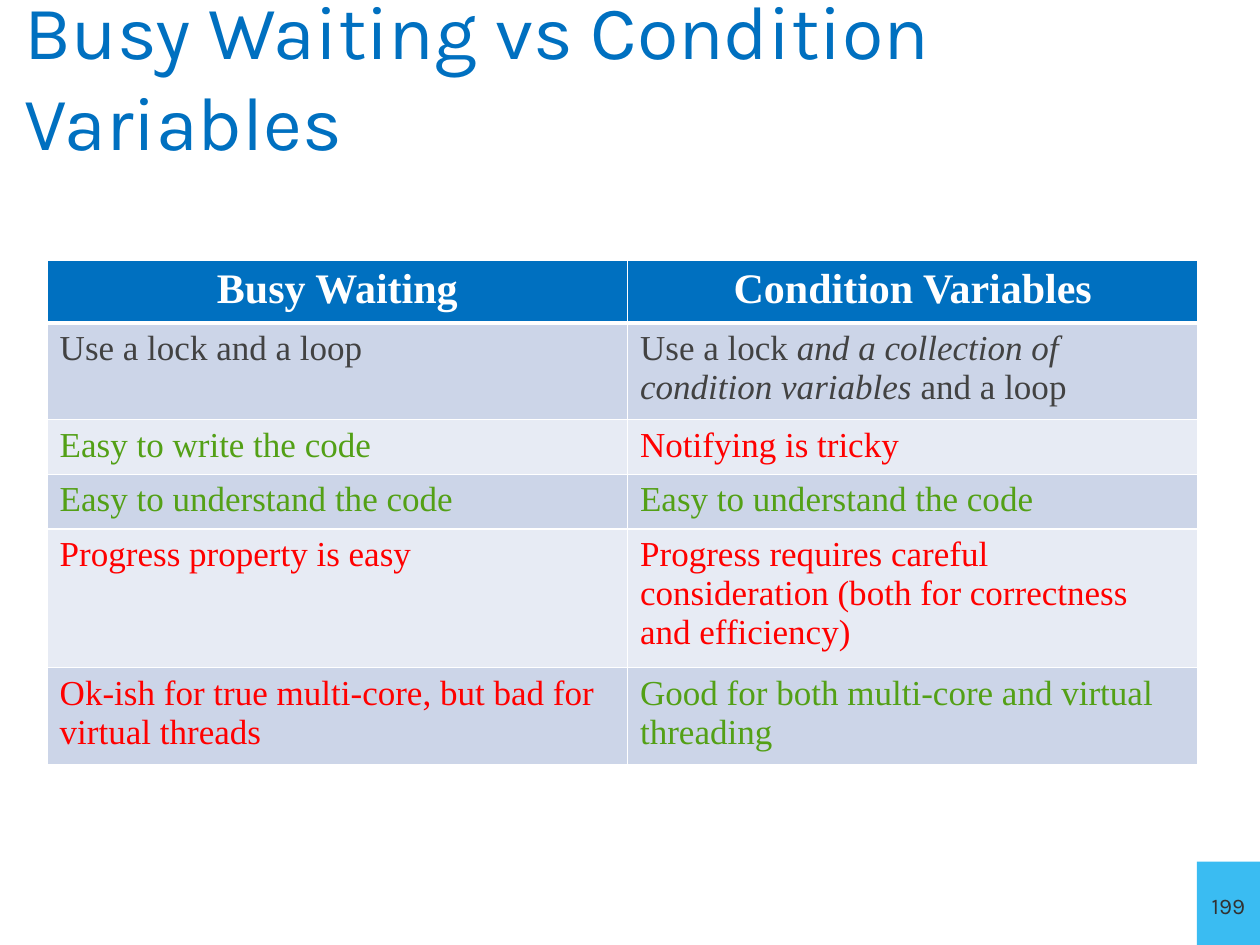
from lxml.etree import SubElement
from pptx import Presentation
from pptx.dml.color import RGBColor
from pptx.enum.shapes import MSO_SHAPE
from pptx.enum.text import MSO_ANCHOR, PP_ALIGN
from pptx.oxml.ns import qn
from pptx.util import Cm, Pt

BLUE = RGBColor(0x00, 0x70, 0xC0)
SKY = RGBColor(0x3A, 0xBC, 0xF2)
WHITE = RGBColor(0xFF, 0xFF, 0xFF)
INK = RGBColor(0x32, 0x32, 0x32)
GRAY = RGBColor(0x42, 0x42, 0x42)
GREEN = RGBColor(0x53, 0xA0, 0x16)
RED = RGBColor(0xFF, 0x00, 0x00)
BANDS = [RGBColor(0xCC, 0xD5, 0xE8), RGBColor(0xE7, 0xEB, 0xF4)]

TITLE = "Busy Waiting vs Condition Variables"
PAGE_NUMBER = "199"
HEADERS = ["Busy Waiting", "Condition Variables"]
ROWS = [
    [(GRAY, ["Use a lock and a loop"]),
     (GRAY, ["Use a lock ", "and a collection of condition variables ", "and a loop"])],
    [(GREEN, ["Easy to write the code"]), (RED, ["Notifying is tricky"])],
    [(GREEN, ["Easy to understand the code"]), (GREEN, ["Easy to understand the code"])],
    [(RED, ["Progress property is easy"]),
     (RED, ["Progress requires careful consideration (both for correctness and efficiency)"])],
    [(RED, ["Ok-ish for true multi-core, but bad for virtual threads"]),
     (GREEN, ["Good for both multi-core and virtual threading"])],
]
COLUMN_WIDTHS = [Cm(11.7), Cm(11.5)]
ROW_HEIGHT = Cm(1.03)


def style(paragraph, name, size, color, bold=False):
    font = paragraph.font
    font.name, font.size, font.bold = name, Pt(size), bold
    font.color.rgb = color


def set_borders(cell, bottom_width):
    properties = cell._tc.get_or_add_tcPr()
    widths = {"a:lnL": 1, "a:lnR": 1, "a:lnT": 1, "a:lnB": bottom_width}
    for position, (tag, width) in enumerate(widths.items()):
        line = SubElement(properties, qn(tag), w=str(Pt(width)))
        fill = SubElement(line, qn("a:solidFill"))
        SubElement(fill, qn("a:srgbClr"), val=str(WHITE))
        properties.insert(position, line)


def fill_cell(cell, texts, size, color, background, header=False):
    cell.fill.solid()
    cell.fill.fore_color.rgb = background
    set_borders(cell, 3 if header else 1)
    paragraph = cell.text_frame.paragraphs[0]
    if header:
        paragraph.alignment = PP_ALIGN.CENTER
    style(paragraph, "Times New Roman", size, color, header)
    for index, text in enumerate(texts):
        run = paragraph.add_run()
        run.text = text
        if index % 2:
            run.font.italic = True


def add_title(slide):
    box = slide.shapes.add_textbox(Cm(0.25), Cm(0.28), Cm(24.9), Cm(2.46))
    frame = box.text_frame
    frame.word_wrap = True
    frame.vertical_anchor = MSO_ANCHOR.MIDDLE
    frame.text = TITLE
    style(frame.paragraphs[0], "Karla", 43.2, BLUE)


def add_page_number(slide):
    badge = slide.shapes.add_shape(MSO_SHAPE.RECTANGLE, Cm(24.13), Cm(17.37), Cm(1.27), Cm(1.68))
    badge.shadow.inherit = False
    badge.fill.solid()
    badge.fill.fore_color.rgb = SKY
    badge.line.fill.background()
    frame = badge.text_frame
    frame.word_wrap = False
    frame.vertical_anchor = MSO_ANCHOR.MIDDLE
    frame.text = PAGE_NUMBER
    paragraph = frame.paragraphs[0]
    paragraph.alignment = PP_ALIGN.CENTER
    style(paragraph, "Karla", 16, INK)
    paragraph.font._element.set("cap", "small")


def add_comparison(slide):
    row_count = len(ROWS) + 1
    table = slide.shapes.add_table(
        row_count, len(HEADERS), Cm(0.95), Cm(5.24),
        sum(COLUMN_WIDTHS), ROW_HEIGHT * row_count).table
    for column, width in zip(table.columns, COLUMN_WIDTHS):
        column.width = width
    for column, text in enumerate(HEADERS):
        fill_cell(table.cell(0, column), [text], 24, WHITE, BLUE, header=True)
    for row, entries in enumerate(ROWS):
        for column, (color, texts) in enumerate(entries):
            fill_cell(table.cell(row + 1, column), texts, 20, color, BANDS[row % 2])


def main():
    presentation = Presentation()
    presentation.slide_width, presentation.slide_height = Cm(25.4), Cm(19.05)
    slide = presentation.slides.add_slide(presentation.slide_layouts[6])
    add_page_number(slide)
    add_title(slide)
    add_comparison(slide)
    presentation.save("out.pptx")


if __name__ == "__main__":
    main()
